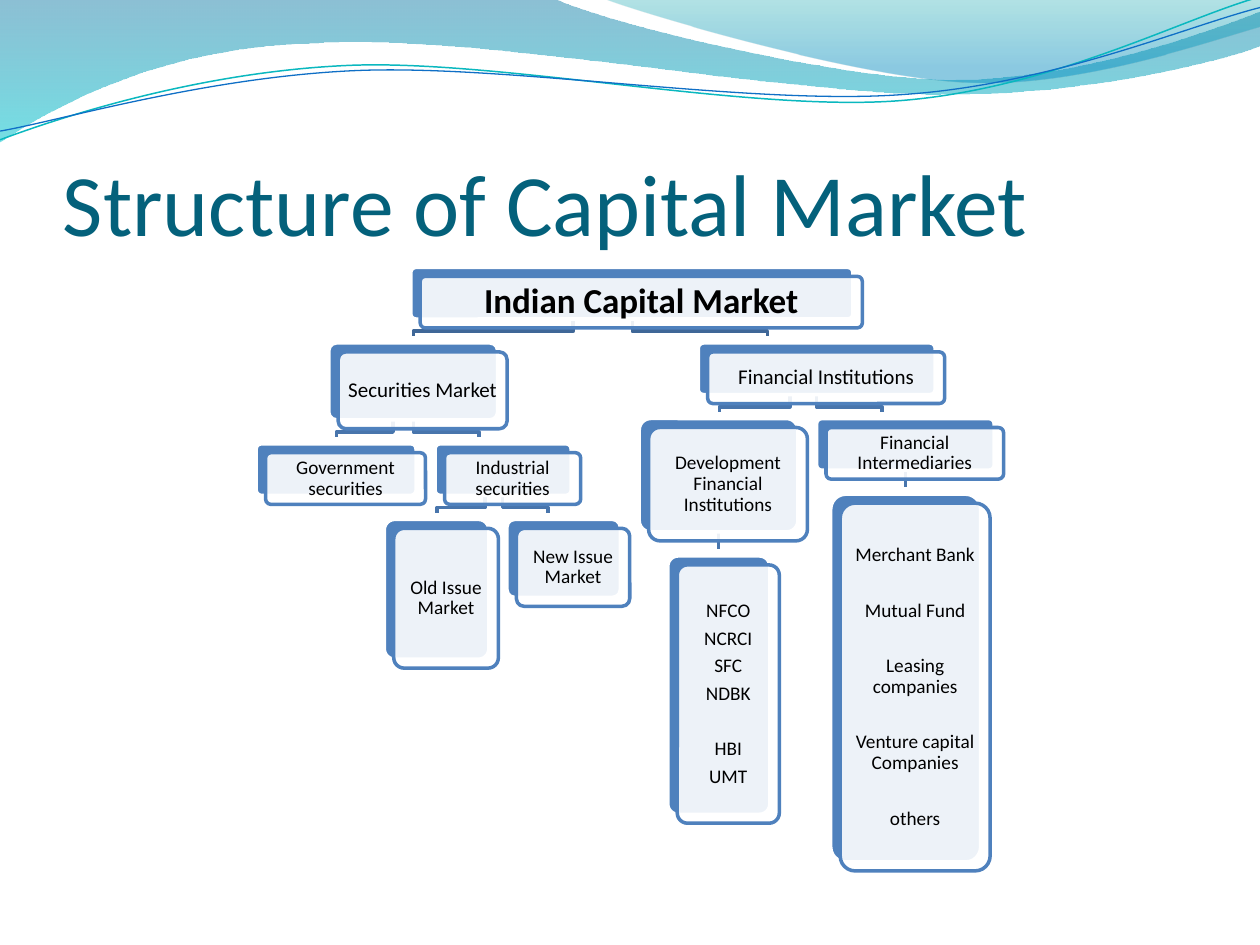
import pptx
import pptx.util
import pptx.dml.color
import pptx.enum.shapes
import pptx.enum.text
from lxml import etree
from pptx.oxml.ns import qn

Pt = pptx.util.Pt

COLORS = {
    "title": "04617B", "text": "000000", "white": "FFFFFF", "box": "4F81BD",
    "link_top": "3F6797", "link": "4875AC", "teal": "0AB8BF", "blue": "0F6FC6",
    "wave_dark": "0074A1", "wave_aqua": "00C6CF",
    "wave_green": "00A1A9", "wave_sky": "008BBF",
}
FONT = "Calibri"
ROW = 29.5                    # height of a one-row box
SHIFT_X, SHIFT_Y = 5.4, 5.1   # shift of the front card from its back plate
TIGHT, WIDE = 3.85, 19.8      # space before list entries

# Waves: a start point, then lines (2 numbers) or Bezier curves (6 numbers)
BANDS = [
    ([(0, 0), (316.8, -0.7), (342.7, 12.2, 478.1, 45.4, 545.8, 45.4),
      (614.2, 45.4, 689.8, 18.7, 720, 6.5), (720.7, 25.9),
      (707.8, 31.7, 626.4, 54.7, 537.1, 54),
      (447.8, 54, 275, 20.2, 185, 24.5), (92.9, 25.9, 33.1, 59.8, -0.7, 81.4),
      (0, 0)],
     [(0, "wave_dark", 45), (1, "wave_aqua", 55)]),
    ([(344.9, -0.7), (366.5, 7.9, 491, 44.6, 553.7, 46.8),
      (616.3, 49.7, 691.9, 23, 720, 15.1), (720, 0), (344.9, -0.7)],
     [(0, "wave_green", 30), (0.8, "wave_sky", 45)]),
]
STRANDS = [
    ([(0, 79.9), (34.6, 67, 113.8, 41, 199.4, 37.4),
      (284.4, 33.8, 427, 64.1, 513.4, 57.6),
      (599.8, 51.1, 675.4, 10.8, 718.6, -1.4)], "teal", 0.85),
    ([(0, 74.9), (33.8, 69.1, 118.1, 43.9, 203.8, 40.3),
      (290.2, 36.7, 429.8, 60.5, 516.2, 54),
      (601.9, 48.2, 677.5, 15.1, 720, 4.3)], "blue", 0.75),
]

# Boxes: left, top, width, height, text size, [(text, space before)]
BOXES = {
    "market": (234.7, 152.8, 252.7, ROW, 20, [("Indian Capital Market", 0)]),
    "securities": (187.9, 196, 96.5, 43.9, 12, [("Securities Market", 0)]),
    "government": (146.4, 253.6, 91.4, ROW, 11, [("Government securities", 0)]),
    "industrial": (248.6, 253.6, 77.8, ROW, 11, [("Industrial securities", 0)]),
    "old": (219.6, 296.8, 59.8, 79.9, 11, [("Old Issue Market", 0)]),
    "new": (289.7, 296.8, 64.8, 44.6, 11, [("New Issue Market", 0)]),
    "institutions": (399, 196, 135.4, ROW, 12, [("Financial Institutions", 0)]),
    "development": (365.3, 239.2, 90.7, 64.8, 11,
                    [("Development Financial Institutions", 0)]),
    "bodies": (381.6, 317.7, 58.3, 147.6, 11,
               [("NFCO", 0), ("NCRCI", TIGHT), ("SFC", TIGHT),
                ("NDBK", TIGHT), ("HBI", WIDE), ("UMT", TIGHT)]),
    "intermediaries": (466.6, 239.2, 101.5, ROW, 11,
                       [("Financial Intermediaries", 0)]),
    "firms": (474.7, 282.4, 85.7, 210.2, 11,
              [("Merchant Bank", 0), ("Mutual Fund", WIDE), ("Leasing companies", WIDE),
               ("Venture capital Companies", WIDE), ("others", WIDE)]),
}
# Elbow links: parent, x at the parent, x at the child
ELBOWS = [
    ("market", 327.6, 236.2), ("market", 361.4, 438.5),
    ("securities", 224.6, 192.2), ("securities", 236.2, 273.6),
    ("industrial", 277.2, 249.8), ("industrial", 287.3, 313.2),
    ("institutions", 451.4, 411.1), ("institutions", 466.6, 504),
]
DROPS = ["development", "intermediaries"]


def rgb(name):
    return pptx.dml.color.RGBColor.from_string(COLORS[name])


def set_alpha(color_el, percent):
    etree.SubElement(color_el, qn("a:alpha")).set("val", str(percent * 1000))


def set_line(sp, color, width):
    sp.line.color.rgb = rgb(color)
    sp.line.width = Pt(width)


def add_outline(s, segments, close=False):
    """Draw lines and, where a segment has six numbers, Bezier curves."""
    ends = [(Pt(seg[-2]), Pt(seg[-1])) for seg in segments]
    builder = s.shapes.build_freeform(*ends[0])
    builder.add_line_segments(ends[1:], close=close)
    sp = builder.convert_to_shape()
    sp.shadow.inherit = False
    for el, seg in zip(list(sp._element.iter(qn("a:lnTo"))), segments[1:]):
        if len(seg) == 6:
            curve = etree.Element(qn("a:cubicBezTo"))
            for x, y in zip(seg[::2], seg[1::2]):
                pt = etree.SubElement(curve, qn("a:pt"))
                pt.set("x", str(Pt(x) - sp.left))
                pt.set("y", str(Pt(y) - sp.top))
            el.getparent().replace(el, curve)
    return sp


def add_band(s, segments, stops):
    sp = add_outline(s, segments, close=True)
    sp.line.fill.background()
    sp.fill.gradient()
    sp.fill.gradient_angle = 270
    for stop, (position, color, _) in zip(sp.fill.gradient_stops, stops):
        stop.position = position
        stop.color.rgb = rgb(color)
    for el, (_, _, alpha) in zip(sp._element.spPr.iter(qn("a:srgbClr")), stops):
        set_alpha(el, alpha)


def add_stroke(s, segments, color, width):
    sp = add_outline(s, segments)
    sp.fill.background()
    set_line(sp, color, width)


def add_text(sp, lines, size, color, bold=False, align=None, spacing=None):
    tf = sp.text_frame
    tf.word_wrap = True
    tf.text = "\n".join(text for text, _ in lines)
    for p, (_, gap) in zip(tf.paragraphs, lines):
        p.alignment = align
        p.line_spacing = spacing
        if gap:
            p.space_before = Pt(gap)
        font = p.runs[0].font
        font.name, font.size, font.bold = FONT, Pt(size), bold
        font.color.rgb = rgb(color)
    return tf


def add_title(s, text):
    sp = s.shapes.add_textbox(Pt(36), Pt(55.4), Pt(648), Pt(90))
    tf = add_text(sp, [(text, 0)], 50, "title")
    tf.vertical_anchor = pptx.enum.text.MSO_ANCHOR.BOTTOM
    tf.margin_left = tf.margin_right = tf.margin_bottom = 0


def add_card(s, x, y, w, h, fill, line):
    sp = s.shapes.add_shape(pptx.enum.shapes.MSO_SHAPE.ROUNDED_RECTANGLE,
                            Pt(x), Pt(y), Pt(w), Pt(h))
    sp.adjustments[0] = 0.1
    sp.shadow.inherit = False
    sp.fill.solid()
    sp.fill.fore_color.rgb = rgb(fill)
    set_line(sp, line, 2)
    return sp


def add_front(s, x, y, w, h, size, lines):
    sp = add_card(s, x + SHIFT_X, y + SHIFT_Y, w, h, "white", "box")
    set_alpha(sp._element.spPr.find(qn("a:solidFill"))[0], 90)
    tf = add_text(sp, lines, size, "text", size == 20,
                  pptx.enum.text.PP_ALIGN.CENTER, 0.9)
    tf.vertical_anchor = pptx.enum.text.MSO_ANCHOR.MIDDLE
    tf.margin_left = tf.margin_right = tf.margin_top = tf.margin_bottom = Pt(3.3)


def add_elbow(s, parent, x1, x2):
    y = BOXES[parent][1] + BOXES[parent][3]
    color = "link_top" if parent == "market" else "link"
    add_stroke(s, [(x1, y), (x1, y + 7), (x2, y + 7), (x2, y + 9.8)], color, 2)


def add_drop(s, parent):
    x, y, w, h = BOXES[parent][:4]
    middle, bottom = x + w / 2, y + h
    add_stroke(s, [(middle, bottom), (middle, bottom + 9.8)], "link", 2)


def main():
    prs = pptx.Presentation()
    prs.slide_width, prs.slide_height = Pt(720), Pt(540)
    s = prs.slides.add_slide(prs.slide_layouts[6])

    # Header waves and title
    for band in BANDS:
        add_band(s, *band)
    for strand in STRANDS:
        add_stroke(s, *strand)
    add_title(s, "Structure of Capital Market")

    # Hierarchy: links, then each back plate with its front card
    for parent in DROPS:
        add_drop(s, parent)
    for elbow in ELBOWS:
        add_elbow(s, *elbow)
    for box in BOXES.values():
        add_card(s, *box[:4], "box", "white")
        add_front(s, *box)

    prs.save("out.pptx")


if __name__ == "__main__":
    main()
